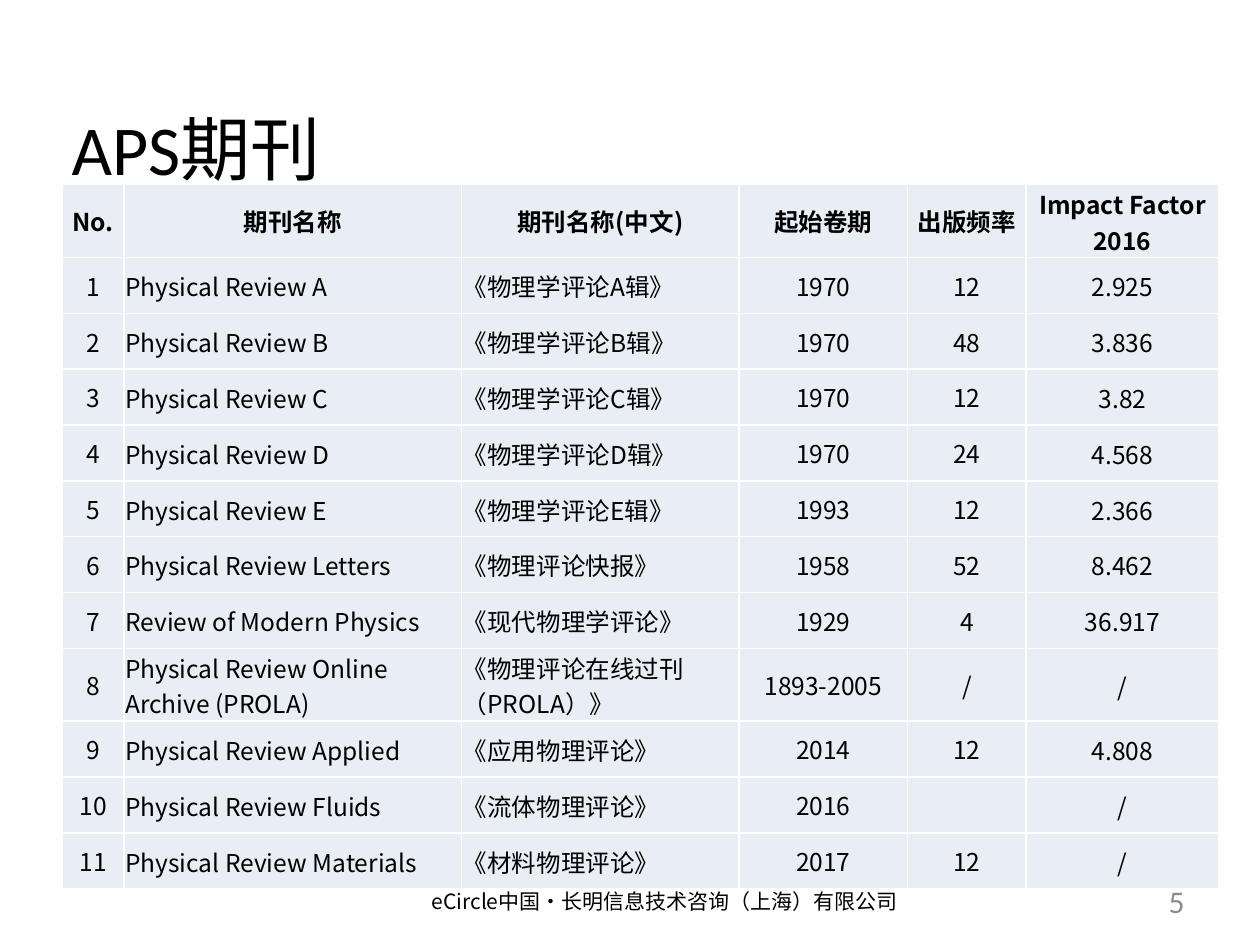
from dataclasses import dataclass

from lxml.etree import SubElement
from pptx import Presentation
from pptx.dml.color import RGBColor
from pptx.enum.text import MSO_ANCHOR, PP_ALIGN
from pptx.oxml.ns import qn
from pptx.slide import Slide
from pptx.table import _Cell
from pptx.text.text import _Paragraph
from pptx.util import Pt

BLACK = RGBColor(0x00, 0x00, 0x00)
GRAY = RGBColor(0x8C, 0x8C, 0x8C)
CELL_FILL = RGBColor(0xE9, 0xED, 0xF4)
BORDER = RGBColor(0xFF, 0xFF, 0xFF)
LATIN_FONT = "Calibri"
CHINESE_FONT = "Noto Sans CJK SC"


@dataclass(frozen=True)
class TextStyle:
    size: float
    font: str
    color: RGBColor = BLACK
    bold: bool = False
    alignment: PP_ALIGN = PP_ALIGN.CENTER


@dataclass(frozen=True)
class Label:
    text: str
    left: float
    top: float
    width: float
    height: float
    style: TextStyle


@dataclass(frozen=True)
class Column:
    heading: str
    width: float
    alignment: PP_ALIGN = PP_ALIGN.CENTER


@dataclass(frozen=True)
class Journal:
    name: str
    chinese_name: str
    first_year: str
    frequency: str
    impact_factor: str


LABELS = [
    Label("APS期刊", 33.84, 50.4, 648, 67.68,
          TextStyle(40, LATIN_FONT, alignment=PP_ALIGN.LEFT)),
    Label("eCircle中国·长明信息技术咨询（上海）有限公司", 219.6, 500.4, 320.4, 28.8,
          TextStyle(12, CHINESE_FONT)),
    Label("5", 607.68, 500.4, 76.32, 28.8,
          TextStyle(18, LATIN_FONT, GRAY, alignment=PP_ALIGN.RIGHT)),
]

COLUMNS = [
    Column("No.", 35.28),
    Column("期刊名称", 192.96, PP_ALIGN.LEFT),
    Column("期刊名称(中文)", 158.4, PP_ALIGN.LEFT),
    Column("起始卷期", 96.48),
    Column("出版频率", 67.68),
    Column("Impact Factor 2016", 110.16),
]

JOURNALS = [
    Journal("Physical Review A", "《物理学评论A辑》", "1970", "12", "2.925"),
    Journal("Physical Review B", "《物理学评论B辑》", "1970", "48", "3.836"),
    Journal("Physical Review C", "《物理学评论C辑》", "1970", "12", "3.82"),
    Journal("Physical Review D", "《物理学评论D辑》", "1970", "24", "4.568"),
    Journal("Physical Review E", "《物理学评论E辑》", "1993", "12", "2.366"),
    Journal("Physical Review Letters", "《物理评论快报》", "1958", "52", "8.462"),
    Journal("Review of Modern Physics", "《现代物理学评论》", "1929", "4", "36.917"),
    Journal("Physical Review Online Archive (PROLA)", "《物理评论在线过刊（PROLA）》",
            "1893-2005", "/", "/"),
    Journal("Physical Review Applied", "《应用物理评论》", "2014", "12", "4.808"),
    Journal("Physical Review Fluids", "《流体物理评论》", "2016", "", "/"),
    Journal("Physical Review Materials", "《材料物理评论》", "2017", "12", "/"),
]

TABLE_LEFT, TABLE_TOP = 35.6, 105.5
ROW_HEIGHT, TWO_LINE_ROW_HEIGHT = 31.9, 41.7
TWO_LINE_ROWS = (0, 8)


def write_run(paragraph: _Paragraph, text: str, style: TextStyle) -> None:
    paragraph.alignment = style.alignment
    run = paragraph.add_run()
    run.text = text
    run.font.size = Pt(style.size)
    run.font.name = style.font
    run.font.bold = style.bold
    run.font.color.rgb = style.color
    SubElement(run.font._element, qn("a:ea"), typeface=CHINESE_FONT)


def add_label(slide: Slide, label: Label) -> None:
    shape = slide.shapes.add_textbox(
        Pt(label.left), Pt(label.top), Pt(label.width), Pt(label.height))
    frame = shape.text_frame
    frame.word_wrap = True
    frame.vertical_anchor = MSO_ANCHOR.MIDDLE
    write_run(frame.paragraphs[0], label.text, label.style)


def add_borders(cell: _Cell) -> None:
    properties = cell._tc.get_or_add_tcPr()
    for position, side in enumerate(("a:lnL", "a:lnR", "a:lnT", "a:lnB")):
        line = SubElement(properties, qn(side), w=str(Pt(1)))
        fill = SubElement(line, qn("a:solidFill"))
        SubElement(fill, qn("a:srgbClr"), val=str(BORDER))
        properties.insert(position, line)


def fill_cell(cell: _Cell, text: str, style: TextStyle, margin: float) -> None:
    cell.fill.solid()
    cell.fill.fore_color.rgb = CELL_FILL
    cell.vertical_anchor = MSO_ANCHOR.MIDDLE
    cell.margin_left = cell.margin_right = cell.margin_top = Pt(margin)
    cell.margin_bottom = Pt(0)
    add_borders(cell)
    if text:
        write_run(cell.text_frame.paragraphs[0], text, style)


def add_journal_table(slide: Slide) -> None:
    rows = [[column.heading for column in COLUMNS]]
    for number, journal in enumerate(JOURNALS, start=1):
        rows.append([str(number), journal.name, journal.chinese_name,
                     journal.first_year, journal.frequency, journal.impact_factor])
    heights = [TWO_LINE_ROW_HEIGHT if index in TWO_LINE_ROWS else ROW_HEIGHT
               for index in range(len(rows))]
    table = slide.shapes.add_table(
        len(rows), len(COLUMNS), Pt(TABLE_LEFT), Pt(TABLE_TOP),
        Pt(sum(column.width for column in COLUMNS)), Pt(sum(heights))).table
    table.first_row = False
    table.horz_banding = False
    for column_index, column in enumerate(COLUMNS):
        table.columns[column_index].width = Pt(column.width)
    for row_index, (texts, height) in enumerate(zip(rows, heights)):
        table.rows[row_index].height = Pt(height)
        is_heading = row_index == 0
        for column_index, (column, text) in enumerate(zip(COLUMNS, texts)):
            alignment = PP_ALIGN.CENTER if is_heading else column.alignment
            style = TextStyle(14, CHINESE_FONT, bold=is_heading, alignment=alignment)
            margin = 0.72 if alignment == PP_ALIGN.LEFT or column is COLUMNS[-1] else 0
            fill_cell(table.cell(row_index, column_index), text, style, margin)


def main() -> None:
    presentation = Presentation()
    presentation.slide_width = Pt(720)
    presentation.slide_height = Pt(540)
    slide = presentation.slides.add_slide(presentation.slide_layouts[6])
    for label in LABELS:
        add_label(slide, label)
    add_journal_table(slide)
    presentation.save("out.pptx")


if __name__ == "__main__":
    main()
